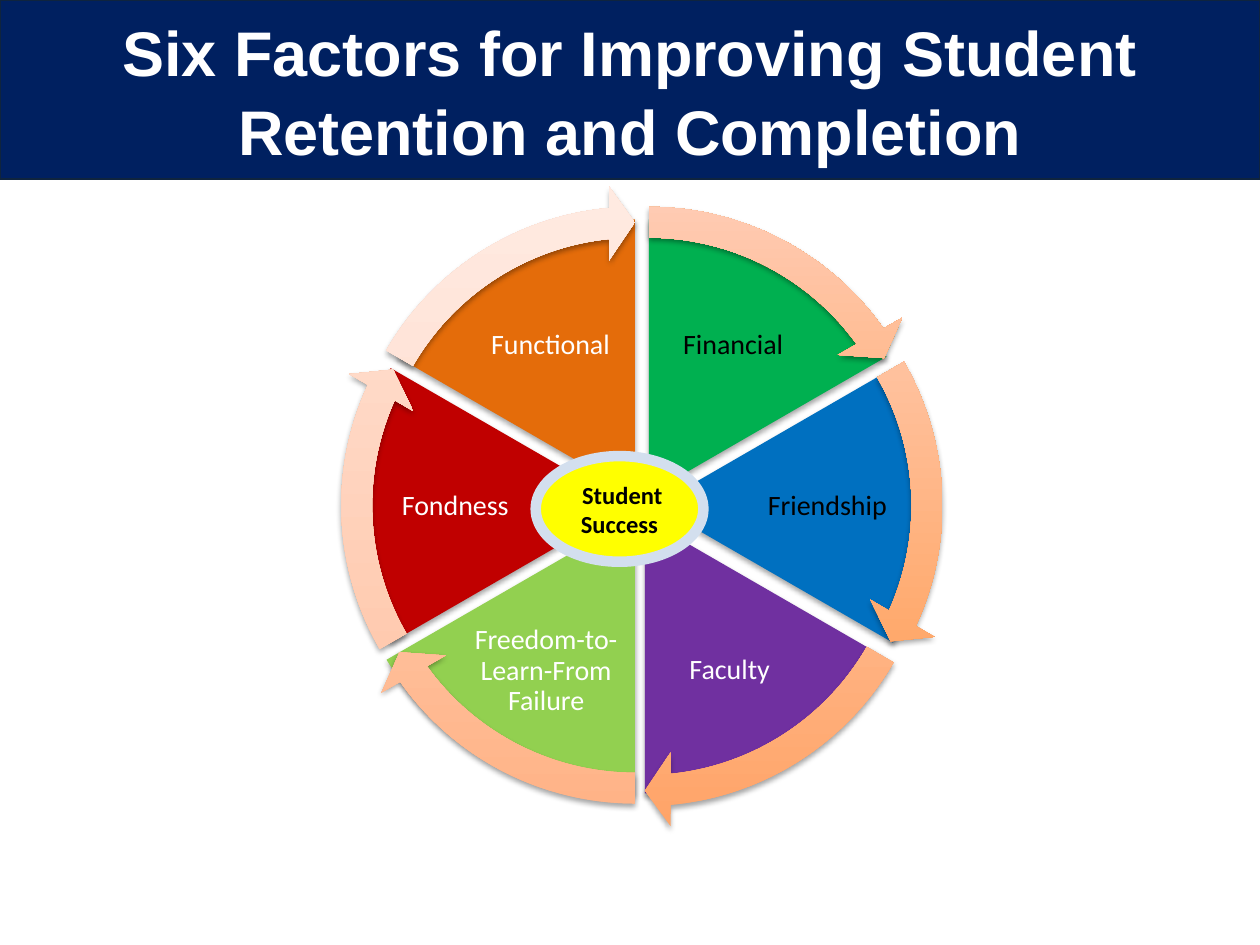
from lxml.etree import SubElement
from pptx import Presentation
from pptx.dml.color import RGBColor
from pptx.enum.shapes import MSO_SHAPE
from pptx.enum.text import MSO_ANCHOR, MSO_AUTO_SIZE, PP_ALIGN
from pptx.oxml.ns import qn
from pptx.util import Cm, Pt

BLACK = RGBColor(0x00, 0x00, 0x00)
WHITE = RGBColor(0xFF, 0xFF, 0xFF)
NAVY = RGBColor(0x00, 0x20, 0x60)
DARK_NAVY = RGBColor(0x0F, 0x24, 0x3E)
GREEN = RGBColor(0x00, 0xB0, 0x50)
BLUE = RGBColor(0x00, 0x70, 0xC0)
PURPLE = RGBColor(0x70, 0x30, 0xA0)
LIME = RGBColor(0x92, 0xD0, 0x50)
RED = RGBColor(0xC0, 0x00, 0x00)
ORANGE = RGBColor(0xE4, 0x6C, 0x0A)
YELLOW = RGBColor(0xFF, 0xFF, 0x00)
PALE_BLUE = RGBColor(0xD3, 0xDF, 0xEE)
PEACHES = [
    (RGBColor(0xFF, 0x8D, 0x30), RGBColor(0xFF, 0xCD, 0xB7)),
    (RGBColor(0xFF, 0x98, 0x4C), RGBColor(0xFF, 0xD2, 0xBD)),
    (RGBColor(0xFF, 0xA4, 0x68), RGBColor(0xFF, 0xD7, 0xC4)),
    (RGBColor(0xFF, 0xB2, 0x85), RGBColor(0xFF, 0xDC, 0xCC)),
    (RGBColor(0xFF, 0xC1, 0xA1), RGBColor(0xFF, 0xE3, 0xD6)),
    (RGBColor(0xFF, 0xD2, 0xBD), RGBColor(0xFF, 0xEA, 0xE1)),
]

WEDGE = (11.07, 11.07)
WIDE_WEDGE = (11.68, 11.23)
RING = (12.45, 12.45)
LABEL = (3.07, 2.24)
FULL_TURN = 216
STEP = FULL_TURN / 6
TOP = 162

FACTORS = [
    ("Financial", GREEN, BLACK, WEDGE, (13.08, 9.96), (14.78, 6.96)),
    ("Friendship", BLUE, BLACK, WEDGE, (13.21, 10.19), (16.68, 10.21)),
    ("Faculty", PURPLE, WHITE, WEDGE, (13.0, 10.46), (14.71, 13.51)),
    ("Freedom-to-Learn-From Failure", LIME, WHITE, WIDE_WEDGE,
     (12.8, 10.41), (11.01, 13.53)),
    ("Fondness", RED, WHITE, WEDGE, (12.67, 10.19), (9.18, 10.21)),
    ("Functional", ORANGE, WHITE, WEDGE, (12.8, 9.96), (11.1, 6.96)),
]


def around(center, size):
    (x, y), (w, h) = center, size
    return [Cm(v) for v in (x - w / 2, y - h / 2, w, h)]


class Deck:
    label_font = {"name": "Calibri", "size": Pt(16), "bold": False}
    hub_font = {"name": "Calibri", "size": Pt(14), "bold": True}
    title_font = {"name": "Arial", "size": Pt(36), "bold": True}

    def __init__(self, prs):
        self.s = prs.slides.add_slide(prs.slide_layouts[5])

    def fill_text(self, sp, text, font, color, margin, spacing):
        tf = sp.text_frame
        frame = {"word_wrap": True, "auto_size": MSO_AUTO_SIZE.NONE,
                 "vertical_anchor": MSO_ANCHOR.MIDDLE}
        if margin is not None:
            for side in ("left", "top", "right", "bottom"):
                frame["margin_" + side] = Cm(margin)
        p = tf.paragraphs[0]
        r = p.add_run()
        r.text = text
        paragraph = {"alignment": PP_ALIGN.CENTER, "line_spacing": spacing}
        for target, values in ((tf, frame), (p, paragraph), (r.font, font)):
            for name, value in values.items():
                setattr(target, name, value)
        r.font.color.rgb = color

    def paint(self, sp, fill, line, width):
        sp.fill.solid()
        sp.fill.fore_color.rgb = fill
        sp.line.color.rgb = line
        sp.line.width = Pt(width)

    def title(self, text, width, height):
        sp = self.s.shapes.title
        box = {"left": 0, "top": 0, "width": width, "height": height}
        for name, value in box.items():
            setattr(sp, name, value)
        self.paint(sp, NAVY, DARK_NAVY, 1)
        self.fill_text(sp, text, self.title_font, WHITE, None, 1.04)

    def shape(self, kind, center, size, adjustments=()):
        sp = self.s.shapes.add_shape(kind, *around(center, size))
        sp.shadow.inherit = False
        for i, value in enumerate(adjustments):
            sp.adjustments[i] = value
        return sp

    def shade(self, sp):
        sp.line.fill.background()
        effects = sp._element.spPr.find(qn("a:effectLst"))
        shadow = SubElement(effects, qn("a:outerShdw"), blurRad="40000",
                            dist="23000", dir="5400000", rotWithShape="0")
        color = SubElement(shadow, qn("a:srgbClr"), val=str(BLACK))
        SubElement(color, qn("a:alpha"), val="35000")

    def wedge(self, center, size, start, color):
        sp = self.shape(MSO_SHAPE.PIE, center, size,
                        (start, (start + STEP) % FULL_TURN))
        sp.fill.solid()
        sp.fill.fore_color.rgb = color
        self.shade(sp)

    def arrow(self, center, start, colors):
        end = (start + 32.72) % FULL_TURN
        sp = self.shape(MSO_SHAPE.CIRCULAR_ARROW, center, RING,
                        (0.05, 3.28, end, start, 0.06))
        sp.fill.gradient()
        sp.fill.gradient_angle = 90
        for stop, color in zip(sp.fill.gradient_stops, colors):
            stop.color.rgb = color
        self.shade(sp)

    def label(self, text, center, color):
        sp = self.s.shapes.add_textbox(*around(center, LABEL))
        self.fill_text(sp, text, self.label_font, color, 0.05, 0.9)

    def hub(self, text, center, size):
        sp = self.shape(MSO_SHAPE.OVAL, center, size)
        self.paint(sp, YELLOW, PALE_BLUE, 6)
        self.fill_text(sp, text, self.hub_font, BLACK, 0.03, 1.0)


def main():
    prs = Presentation()
    prs.slide_width, prs.slide_height = Cm(25.4), Cm(19.05)
    deck = Deck(prs)
    deck.title("Six Factors for Improving Student Retention and Completion",
               prs.slide_width, Cm(3.61))
    starts = [(TOP + i * STEP) % FULL_TURN for i in range(len(FACTORS))]
    for start, factor in zip(starts, FACTORS):
        text, color, text_color, size, center, label_center = factor
        deck.wedge(center, size, start, color)
        deck.label(text, label_center, text_color)
    for start, factor, colors in zip(starts, FACTORS, PEACHES):
        deck.arrow(factor[4], start, colors)
    deck.hub(" Student Success", (12.49, 10.26), (3.38, 2.13))
    prs.save("out.pptx")


if __name__ == "__main__":
    main()
